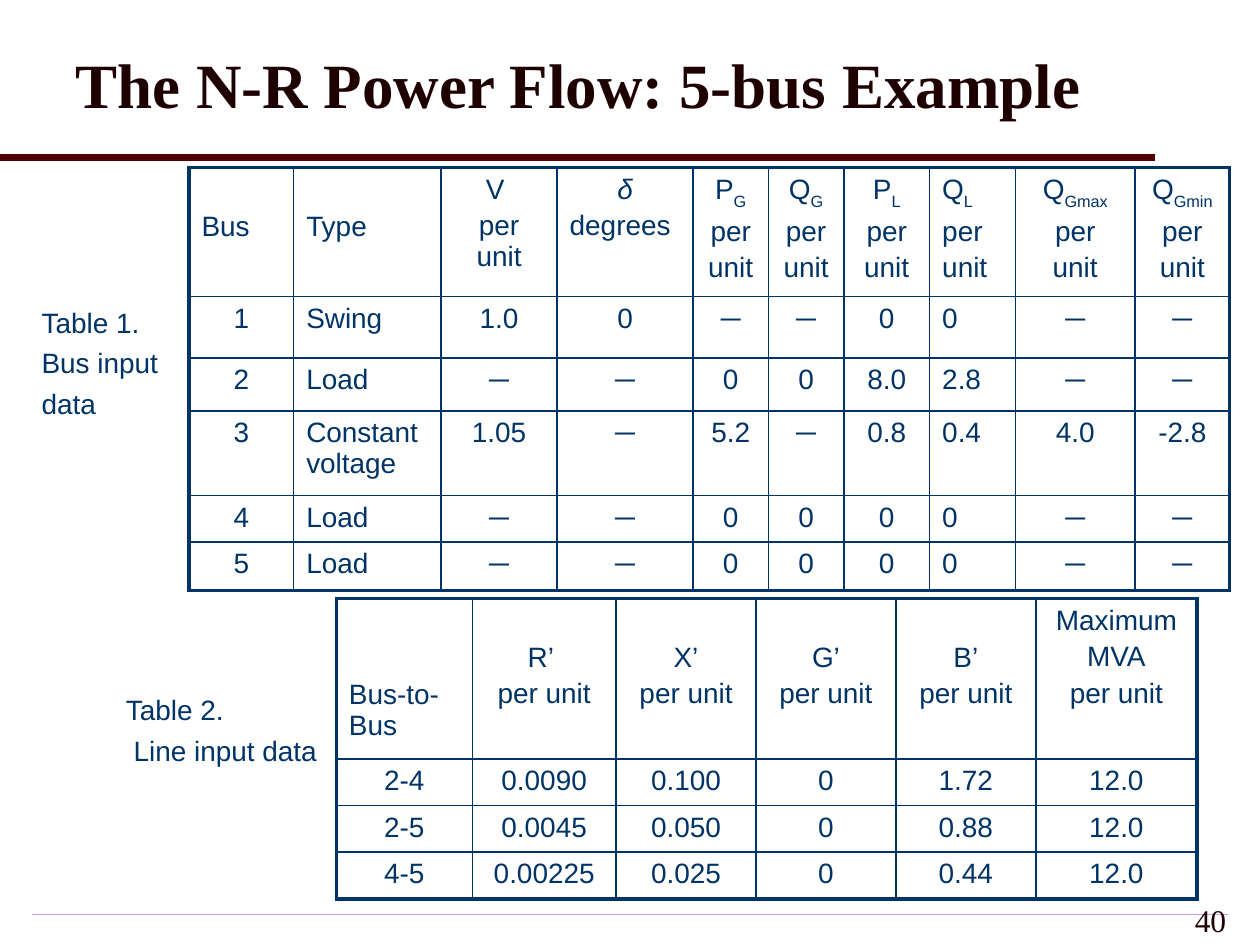
"""Build the five-bus power flow slide with its two input tables."""
from dataclasses import dataclass

from lxml import etree
from pptx import Presentation
from pptx import util as u
from pptx.dml.color import RGBColor
from pptx.enum import shapes, text
from pptx.oxml import ns


@dataclass(frozen=True)
class Theme:
    ink: str = "003366"
    dark: str = "1E0000"
    rule: str = "500000"
    glow: str = "CC99FF"
    pale: str = "F3EBFF"
    sans: str = "Arial"
    serif: str = "Times New Roman"
    head: float = 36
    page: float = 18
    body: float = 16
    thin: float = 1
    thick: float = 2.25


LEFT, MID, RIGHT = text.PP_ALIGN.LEFT, text.PP_ALIGN.CENTER, text.PP_ALIGN.RIGHT


class Deck:
    def __init__(self, look):
        self.look = look
        self.prs = Presentation()
        self.prs.slide_width, self.prs.slide_height = u.Cm(25.4), u.Cm(19.05)
        self.slide = self.prs.slides.add_slide(self.prs.slide_layouts[5])

    def run(self, para, words, face=None, size=None, color=None):
        run = para.add_run()
        run.text = words
        font = run.font
        font.name = face or self.look.sans
        font.size = u.Pt(size or self.look.body)
        font.color.rgb = RGBColor.from_string(color or self.look.ink)
        return run

    def lines(self, frame, words, align=LEFT, gap=3):
        for i, line in enumerate(words.split("\n")):
            para = frame.add_paragraph() if i else frame.paragraphs[0]
            para.alignment = LEFT if line.startswith("<") else align
            if i:
                para.space_before = u.Pt(gap)
            base, _, sub = line.lstrip("<").partition("_")
            self.run(para, base).font.italic = base == "δ"
            if sub:
                low = self.run(para, sub)
                low._r.get_or_add_rPr().set("baseline", "-30000")

    def title(self, words, *box):
        shape = self.slide.shapes.title
        shape.left, shape.top, shape.width, shape.height = map(u.Cm, box)
        frame = shape.text_frame
        frame.auto_size = text.MSO_AUTO_SIZE.NONE
        frame.vertical_anchor = text.MSO_ANCHOR.MIDDLE
        para = frame.paragraphs[0]
        para.alignment = LEFT
        look = self.look
        self.run(para, words, look.serif, look.head, look.dark).font.bold = True

    def label(self, words, *box):
        frame = self.slide.shapes.add_textbox(*map(u.Cm, box)).text_frame
        frame.margin_left = frame.margin_right = 0
        frame.margin_top = frame.margin_bottom = 0
        frame.word_wrap = False
        self.lines(frame, words, gap=4)

    def page(self, words, *box):
        frame = self.slide.shapes.add_textbox(*map(u.Cm, box)).text_frame
        frame.word_wrap = True
        para = frame.paragraphs[0]
        para.alignment = RIGHT
        self.run(para, words, self.look.serif, self.look.page, self.look.dark)

    def rule(self, x, y, end, width):
        line = self.slide.shapes.add_connector(
            shapes.MSO_CONNECTOR.STRAIGHT, u.Cm(x), u.Cm(y), u.Cm(end), u.Cm(y))
        line.line.color.rgb = RGBColor.from_string(self.look.rule)
        line.line.width = u.Pt(width)
        etree.SubElement(line._element.spPr, ns.qn("a:effectLst"))

    def bar(self, *box):
        bar = self.slide.shapes.add_shape(
            shapes.MSO_SHAPE.RECTANGLE, *map(u.Cm, box))
        bar.shadow.inherit = False
        bar.line.fill.background()
        bar.fill.gradient()
        for stop, color in zip(bar.fill.gradient_stops,
                               (self.look.glow, self.look.pale)):
            stop.color.rgb = RGBColor.from_string(color)
        lin = bar._element.xpath(".//a:gradFill/a:lin")[0]
        focus = etree.Element(ns.qn("a:path"), path="shape")
        etree.SubElement(focus, ns.qn("a:fillToRect"),
                         dict.fromkeys("ltrb", "50000"))
        lin.getparent().replace(lin, focus)

    def edge(self, cell, side, outer):
        width = u.Pt(self.look.thick if outer else self.look.thin)
        line = etree.SubElement(cell._tc.get_or_add_tcPr(),
                                ns.qn("a:ln" + side), w=str(int(width)))
        fill = etree.SubElement(line, ns.qn("a:solidFill"))
        etree.SubElement(fill, ns.qn("a:srgbClr"), val=self.look.ink)

    def table(self, x, y, cols, rows, data, drops, left=()):
        grid = self.slide.shapes.add_table(
            len(rows), len(cols), u.Cm(x), u.Cm(y),
            u.Cm(sum(cols)), u.Cm(sum(rows))).table
        grid.first_row = grid.horz_banding = False
        for col, width in zip(grid.columns, cols):
            col.width = u.Cm(width)
        for row, height in zip(grid.rows, rows):
            row.height = u.Cm(height)
        for r, line in enumerate(data):
            for c, words in enumerate(line):
                cell = grid.cell(r, c)
                drop = 0 if r else drops[c]
                cell.margin_top = u.Cm(0.13 + 0.75 * drop)
                self.lines(cell.text_frame, words, LEFT if c in left else MID)
                for side, outer in (("L", c == 0), ("R", c == len(cols) - 1),
                                    ("T", r == 0), ("B", r == len(rows) - 1)):
                    self.edge(cell, side, outer)
                cell.fill.background()


BUS = [
    ["<Bus", "Type", "V \nper unit", "δ\n<degrees"]
    + [name + "\nper\nunit"
       for name in ("P_G", "Q_G", "P_L", "Q_L", "Q_Gmax", "Q_Gmin")],
    ["1", "Swing", "1.0", "0", "─", "─", "0", "0", "─", "─"],
    ["2", "Load", "─", "─", "0", "0", "8.0", "2.8", "─", "─"],
    ["3", "Constant voltage", "1.05", "─", "5.2", "─", "0.8", "0.4", "4.0", "-2.8"],
    ["4", "Load", "─", "─", "0", "0", "0", "0", "─", "─"],
    ["5", "Load", "─", "─", "0", "0", "0", "0", "─", "─"],
]
LINE = [
    ["<Bus-to-Bus"]
    + [name + "\nper unit" for name in ("R’ ", "X’", "G’", "B’", "Maximum\nMVA")],
    ["2-4", "0.0090", "0.100", "0", "1.72", "12.0"],
    ["2-5", "0.0045", "0.050", "0", "0.88", "12.0"],
    ["4-5", "0.00225", "0.025", "0", "0.44", "12.0"],
]


def main():
    deck = Deck(Theme())
    deck.bar(0.64, 18.42, 24.13, 0.03)
    deck.rule(0, 3.18, 23.28, 4)
    deck.table(3.81, 3.38,
               [2.11, 2.97, 2.34, 2.74, 1.52, 1.52, 1.73, 1.73, 2.41, 1.91],
               [2.6, 1.24, 1.07, 1.7, 0.94, 0.97],
               BUS, [1, 1] + [0] * 8, left=(1, 7))
    deck.label("Table 1.\nBus input\ndata", 0.84, 6.15, 2.51, 2.03)
    deck.table(6.78, 12.07, [2.74, 2.9, 2.82, 2.82, 2.82, 3.25],
               [3.23, 0.94, 0.94, 0.94], LINE, [2, 1, 1, 1, 1, 0])
    deck.label("Table 2.\n Line input data", 2.54, 13.97, 3.86, 1.35)
    deck.title("The N-R Power Flow: 5-bus Example", 1.27, 0.2, 22.86, 2.97)
    deck.page("40", 19.05, 18.03, 5.92, 0.69)
    deck.prs.save("out.pptx")


if __name__ == "__main__":
    main()
